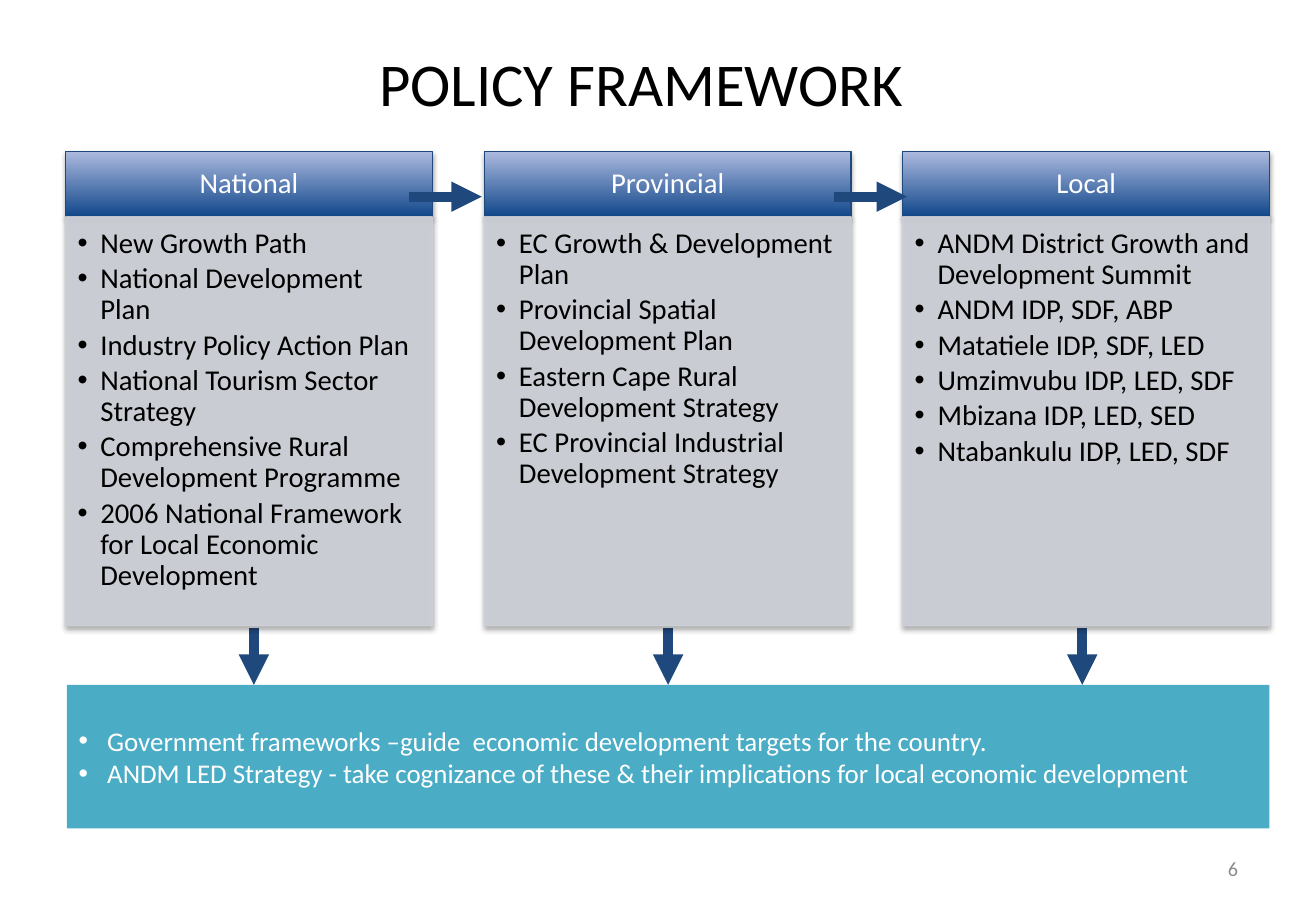
from dataclasses import dataclass

from lxml.etree import SubElement
from pptx import Presentation
from pptx.dml.color import RGBColor
from pptx.enum.shapes import MSO_CONNECTOR, MSO_SHAPE
from pptx.enum.text import MSO_ANCHOR, PP_ALIGN
from pptx.oxml.ns import qn
from pptx.util import Pt

HUES = {
    "navy": "1F497D", "deep": "11478B", "pale": "ABB9DE", "grey": "CDD0D7",
    "teal": "4BACC6", "dim": "8C8C8C", "black": "000000", "white": "FFFFFF",
}
LEFT, STEP, WIDE = 38.9, 248.1, 217.4
HEAD_TOP, HEAD_H = 90, 38.5
BODY_TOP, BODY_H = 128.5, 242.5
BASE_TOP = 406


@dataclass
class Box:
    left: float
    top: float
    width: float
    height: float


@dataclass
class Style:
    size: float
    hue: str
    align: PP_ALIGN = PP_ALIGN.LEFT
    anchor: MSO_ANCHOR = MSO_ANCHOR.MIDDLE
    inset: tuple = (7.2, 3.6, 7.2, 3.6)
    indent: float = 0
    pitch: float = 1
    after: float = 0


@dataclass
class Level:
    name: str
    plans: list


TITLE = Style(36, "black", PP_ALIGN.CENTER)
NUMBER = Style(12, "dim", PP_ALIGN.RIGHT)
HEAD = Style(17, "white", PP_ALIGN.CENTER, inset=(9.5, 5.5, 9.5, 5.5), pitch=0.9)
BODY = Style(17, "black", anchor=MSO_ANCHOR.TOP, inset=(7.2, 7.2, 9.5, 10.7),
             indent=13.5, pitch=0.9, after=2.55)
BASE = Style(16, "white", indent=16.9)

LEVELS = [
    Level("National", [
        "New Growth Path",
        "National Development Plan",
        "Industry Policy Action Plan",
        "National Tourism Sector Strategy",
        "Comprehensive Rural Development Programme",
        "2006 National Framework for Local Economic Development",
    ]),
    Level("Provincial", [
        "EC Growth & Development Plan",
        "Provincial Spatial Development Plan",
        "Eastern Cape Rural Development Strategy",
        "EC Provincial Industrial Development Strategy",
    ]),
    Level("Local", [
        "ANDM District Growth and Development Summit",
        "ANDM IDP, SDF, ABP",
        "Matatiele IDP, SDF, LED",
        "Umzimvubu IDP, LED, SDF",
        "Mbizana IDP, LED, SED",
        "Ntabankulu IDP, LED, SDF",
    ]),
]
NOTES = [
    "Government frameworks –guide  economic development targets for the country.",
    "ANDM LED Strategy - take cognizance of these & their implications "
    "for local economic development",
]


def shade(name: str) -> RGBColor:
    return RGBColor.from_string(HUES[name])


def frame(box: Box) -> list:
    return [Pt(n) for n in (box.left, box.top, box.width, box.height)]


def write(shape, lines: list[str], style: Style) -> None:
    text = shape.text_frame
    text.word_wrap = True
    text.vertical_anchor = style.anchor
    (text.margin_left, text.margin_top,
     text.margin_right, text.margin_bottom) = map(Pt, style.inset)
    text.text = "\n".join(lines)
    for para in text.paragraphs:
        para.alignment = style.align
        para.line_spacing = style.pitch
        para.space_after = Pt(style.after)
        if style.indent:
            props = para._p.get_or_add_pPr()
            props.set("marL", str(Pt(style.indent)))
            props.set("indent", str(-Pt(style.indent)))
            SubElement(props, qn("a:buFont"), typeface="Arial")
            SubElement(props, qn("a:buChar"), char="•")
        para.font.name = "Calibri"
        para.font.size = Pt(style.size)
        para.font.color.rgb = shade(style.hue)


def label(slide, box: Box, line: str, style: Style) -> None:
    write(slide.shapes.add_textbox(*frame(box)), [line], style)


def block(slide, box: Box, lines: list[str], style: Style):
    """Add a rectangle with text, without shadow, fill or line."""
    shape = slide.shapes.add_shape(MSO_SHAPE.RECTANGLE, *frame(box))
    shape.shadow.inherit = False
    shape.line.fill.background()
    write(shape, lines, style)
    return shape


def edge(shape, hue: str) -> None:
    shape.line.color.rgb = shade(hue)
    shape.line.width = Pt(0.75)


def lift(shape) -> None:
    """Give the shape a soft shadow below."""
    glow = SubElement(shape._element.spPr.find(qn("a:effectLst")),
                      qn("a:outerShdw"), blurRad=str(Pt(3.1)), dist=str(Pt(1.8)),
                      dir="5400000", rotWithShape="0")
    tone = SubElement(glow, qn("a:srgbClr"), val=HUES["black"])
    SubElement(tone, qn("a:alpha"), val="35000")


def column(slide, left: float, level: Level) -> None:
    head = block(slide, Box(left, HEAD_TOP, WIDE, HEAD_H), [level.name], HEAD)
    head.fill.gradient()
    head.fill.gradient_angle = 90
    for stop, hue in zip(head.fill.gradient_stops, ("deep", "pale")):
        stop.color.rgb = shade(hue)
    edge(head, "navy")
    lift(head)

    body = block(slide, Box(left, BODY_TOP, WIDE, BODY_H), level.plans, BODY)
    body.fill.solid()
    body.fill.fore_color.rgb = shade("grey")
    edge(body, "grey")
    for tone in body._element.spPr.iter(qn("a:srgbClr")):
        SubElement(tone, qn("a:alpha"), val="90000")
    lift(body)


def arrow(slide, x: float, y: float, dx: float, dy: float) -> None:
    link = slide.shapes.add_connector(
        MSO_CONNECTOR.STRAIGHT, Pt(x), Pt(y), Pt(x + dx), Pt(y + dy))
    link.line.color.rgb = shade("navy")
    link.line.width = Pt(6)
    props = link._element.spPr
    SubElement(props.find(qn("a:ln")), qn("a:tailEnd"), type="triangle")
    SubElement(props, qn("a:effectLst"))


def main() -> None:
    deck = Presentation()
    deck.slide_width, deck.slide_height = Pt(780), Pt(540)
    slide = deck.slides.add_slide(deck.slide_layouts[6])

    for i in range(len(LEVELS)):
        arrow(slide, 150.5 + 245.5 * i, 372, 0, BASE_TOP - 372)
    label(slide, Box(27.4, 3.6, 713.5, 90), "POLICY FRAMEWORK ", TITLE)
    label(slide, Box(558.7, 500.4, 182.2, 28.8), "6", NUMBER)
    for i, level in enumerate(LEVELS):
        column(slide, LEFT + STEP * i, level)
    base = block(slide, Box(39.6, BASE_TOP, 712.8, 85), NOTES, BASE)
    base.fill.solid()
    base.fill.fore_color.rgb = shade("teal")
    for i in range(len(LEVELS) - 1):
        arrow(slide, 242.6 + 252 * i, 116.6, 43, 0)

    deck.save("out.pptx")


if __name__ == "__main__":
    main()
